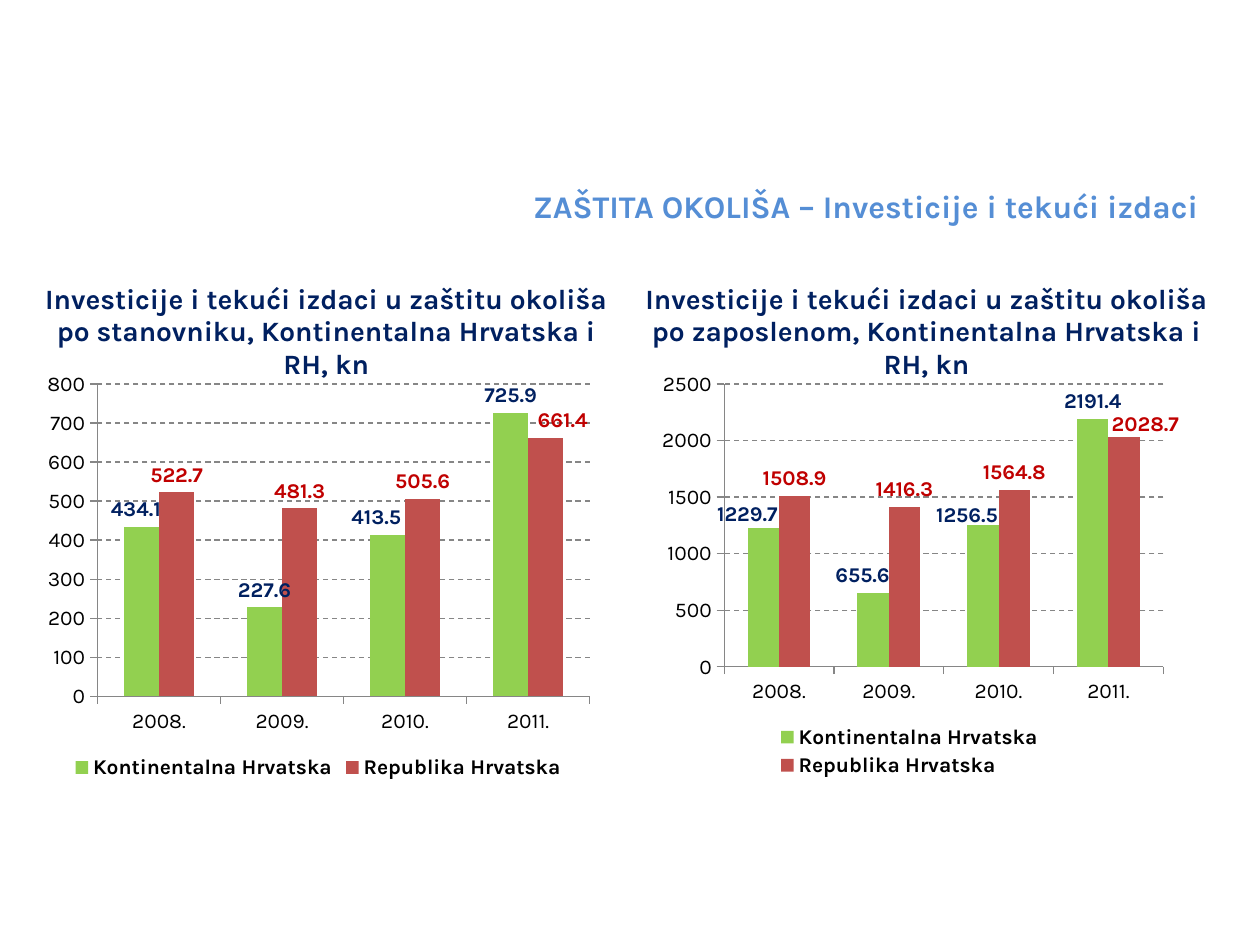
from lxml import etree
from pptx import Presentation
from pptx.chart.data import CategoryChartData
from pptx.dml.color import RGBColor
from pptx.enum.chart import XL_CHART_TYPE, XL_LABEL_POSITION, XL_LEGEND_POSITION, XL_TICK_MARK
from pptx.enum.dml import MSO_LINE
from pptx.enum.text import MSO_ANCHOR, PP_ALIGN
from pptx.oxml.ns import qn
from pptx.util import Pt

CLUSTERED = XL_CHART_TYPE.COLUMN_CLUSTERED
OUTSIDE_END = XL_LABEL_POSITION.OUTSIDE_END
BOTTOM = XL_LEGEND_POSITION.BOTTOM
TICK_OUT, TICK_NONE = XL_TICK_MARK.OUTSIDE, XL_TICK_MARK.NONE
DASH = MSO_LINE.DASH
TOP = MSO_ANCHOR.TOP
LEFT, CENTER = PP_ALIGN.LEFT, PP_ALIGN.CENTER

FONT = "Karla"
COLORS = {"title": "558ED5", "navy": "002060", "red": "C00000", "green_bar": "92D050",
          "red_bar": "C0504D", "axis": "868686", "black": "000000"}

TITLE = "ZAŠTITA OKOLIŠA – Investicije i tekući izdaci"
YEARS = ["2008.", "2009.", "2010.", "2011."]
SERIES = [("Kontinentalna Hrvatska", "green_bar", "navy"),
          ("Republika Hrvatska", "red_bar", "red")]
COLUMN_WIDTHS = [344, 342]
PANELS = [
    {"heading": "Investicije i tekući izdaci u zaštitu okoliša po stanovniku, "
                "Kontinentalna Hrvatska i RH, kn",
     "left": 20.2, "width": 323.3, "top_value": 800, "step": 100,
     "values": [[434.1, 227.6, 413.5, 725.9], [522.7, 481.3, 505.6, 661.4]],
     "shifts": [{0: (-0.01, 0), 2: (-0.02, 0)}, {3: (0.03, 0)}],
     "plot": (0.11, 0.05, 0.87, 0.74), "legend": None},
    {"heading": "Investicije i tekući izdaci u zaštitu okoliša po zaposlenom, "
                "Kontinentalna Hrvatska i RH, kn",
     "left": 371.5, "width": 302.4, "top_value": 2500, "step": 500,
     "values": [[1229.7, 655.6, 1256.5, 2191.4], [1508.9, 1416.3, 1564.8, 2028.7]],
     "shifts": [{0: (-0.03, 0.01), 1: (-0.02, 0), 2: (-0.03, 0.02)}, {3: (0.04, 0.01)}],
     "plot": (0.14, 0.05, 0.83, 0.67), "legend": (0.24, 0.85, 0.5, 0.14)},
]


def rgb(name):
    return RGBColor.from_string(COLORS[name])


def style_font(font, size=12, color="black", bold=False):
    font.name, font.size, font.bold = FONT, Pt(size), bold
    font.color.rgb = rgb(color)


def write(tf, text, align=LEFT, **style):
    p = tf.paragraphs[0]
    p.alignment = align
    r = p.add_run()
    r.text = text
    style_font(r.font, **style)


def make_layout(**settings):
    layout = etree.Element(qn("c:layout"))
    manual = etree.SubElement(layout, qn("c:manualLayout"))
    for tag, value in settings.items():
        etree.SubElement(manual, qn("c:" + tag)).set("val", str(value))
    return layout


def place(parent, after, box, **target):
    for old in parent.findall(qn("c:layout")):
        parent.remove(old)
    layout = make_layout(**target, xMode="edge", yMode="edge", **dict(zip("xywh", box)))
    if after is None:
        parent.insert(0, layout)
    else:
        after.addnext(layout)


def format_axes(chart, panel):
    values, years = chart.value_axis, chart.category_axis
    values.minimum_scale, values.maximum_scale = 0, panel["top_value"]
    values.major_unit = panel["step"]
    values.tick_labels.number_format = "0"
    values.tick_labels.number_format_is_linked = False
    grid = values.major_gridlines.format.line
    grid.dash_style = DASH
    for line in (grid, values.format.line, years.format.line):
        line.color.rgb = rgb("axis")
        line.width = Pt(0.75)
    for axis in (values, years):
        axis.major_tick_mark, axis.minor_tick_mark = TICK_OUT, TICK_NONE


def format_series(series, bar, label, shifts):
    series.format.fill.solid()
    series.format.fill.fore_color.rgb = rgb(bar)
    labels = series.data_labels
    labels.show_value = True
    labels.number_format, labels.number_format_is_linked = "0.0", False
    labels.position = OUTSIDE_END
    style_font(labels.font, color=label, bold=True)
    for index, (x, y) in shifts.items():
        point_label = series.points[index].data_label
        style_font(point_label.font, color=label, bold=True)
        point_label.position = OUTSIDE_END
    for element in labels._element.findall(qn("c:dLbl")):
        idx = element.find(qn("c:idx"))
        x, y = shifts[int(idx.get("val"))]
        idx.addnext(make_layout(x=x, y=y))


def add_panel_chart(s, panel):
    data = CategoryChartData(number_format="0.0")
    data.categories = YEARS
    for (name, _, _), values in zip(SERIES, panel["values"]):
        data.add_series(name, values)
    chart = s.shapes.add_chart(CLUSTERED, Pt(panel["left"]), Pt(207.4),
                               Pt(panel["width"]), Pt(241.2), data).chart
    chart.has_title = False
    style_font(chart.font)
    plot = chart.plots[0]
    plot.gap_width, plot.overlap, plot.vary_by_categories = 150, 0, False
    format_axes(chart, panel)
    for series, (_, bar, label), shifts in zip(plot.series, SERIES, panel["shifts"]):
        format_series(series, bar, label, shifts)
    chart.has_legend = True
    legend = chart.legend
    legend.position, legend.include_in_layout = BOTTOM, False
    style_font(legend.font, bold=True)
    place(chart._chartSpace.chart.plotArea, None, panel["plot"], layoutTarget="inner")
    if panel["legend"]:
        place(legend._element, legend._element.find(qn("c:legendPos")), panel["legend"])


def add_heading_table(s):
    table = s.shapes.add_table(1, len(PANELS), Pt(14.4), Pt(139.7),
                               Pt(sum(COLUMN_WIDTHS)), Pt(334.8)).table
    table.first_row = table.horz_banding = False
    for i, (panel, width) in enumerate(zip(PANELS, COLUMN_WIDTHS)):
        table.columns[i].width = Pt(width)
        cell = table.cell(0, i)
        cell.fill.background()
        cell.vertical_anchor = TOP
        cell.margin_top = Pt(22.3)
        write(cell.text_frame, panel["heading"], CENTER, size=16, color="navy", bold=True)


def add_title(s):
    sp = s.shapes.title
    sp.left, sp.top, sp.width, sp.height = Pt(297.4), Pt(103), Pt(408.2), Pt(28.8)
    sp.text_frame.word_wrap = True
    sp.text_frame.vertical_anchor = TOP
    write(sp.text_frame, TITLE, size=18, color="title", bold=True)


def main():
    prs = Presentation()
    prs.slide_width, prs.slide_height = Pt(720), Pt(540)
    s = prs.slides.add_slide(prs.slide_layouts[5])
    add_title(s)
    add_heading_table(s)
    for panel in PANELS:
        add_panel_chart(s, panel)
    prs.save("out.pptx")


if __name__ == "__main__":
    main()
